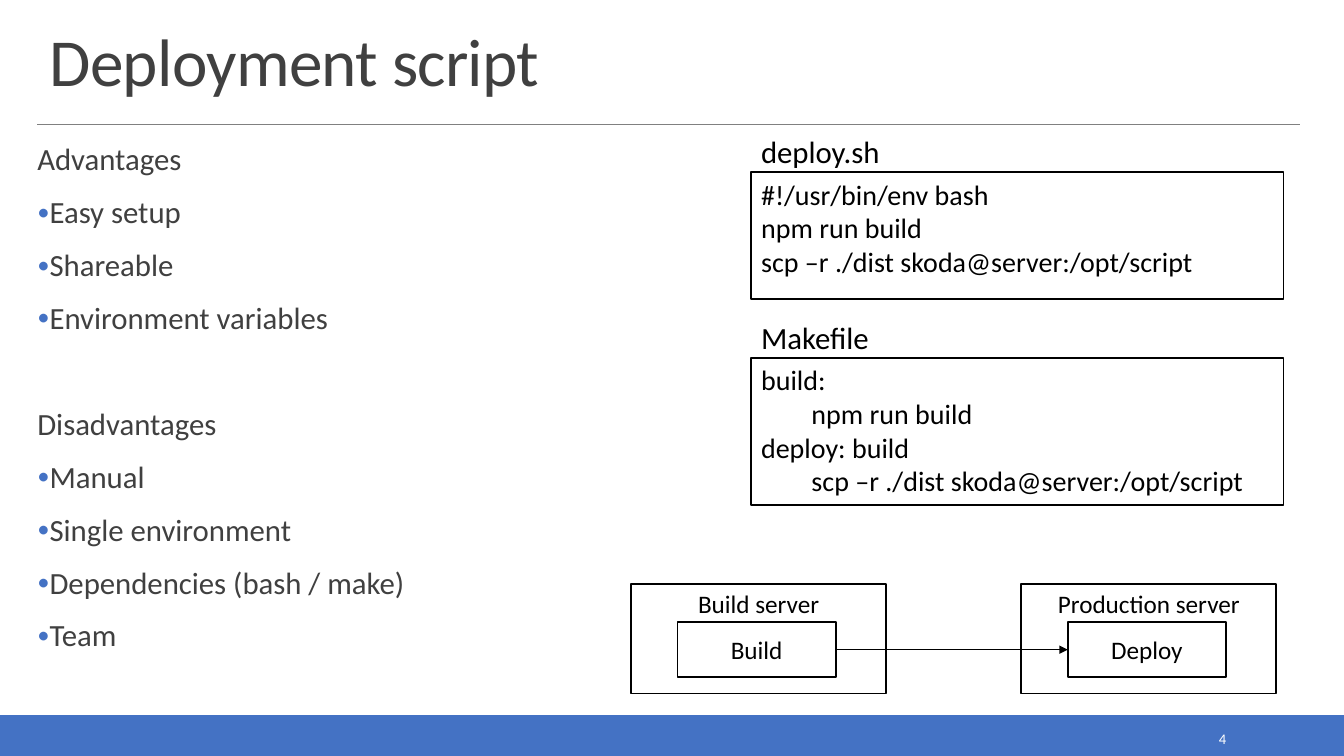
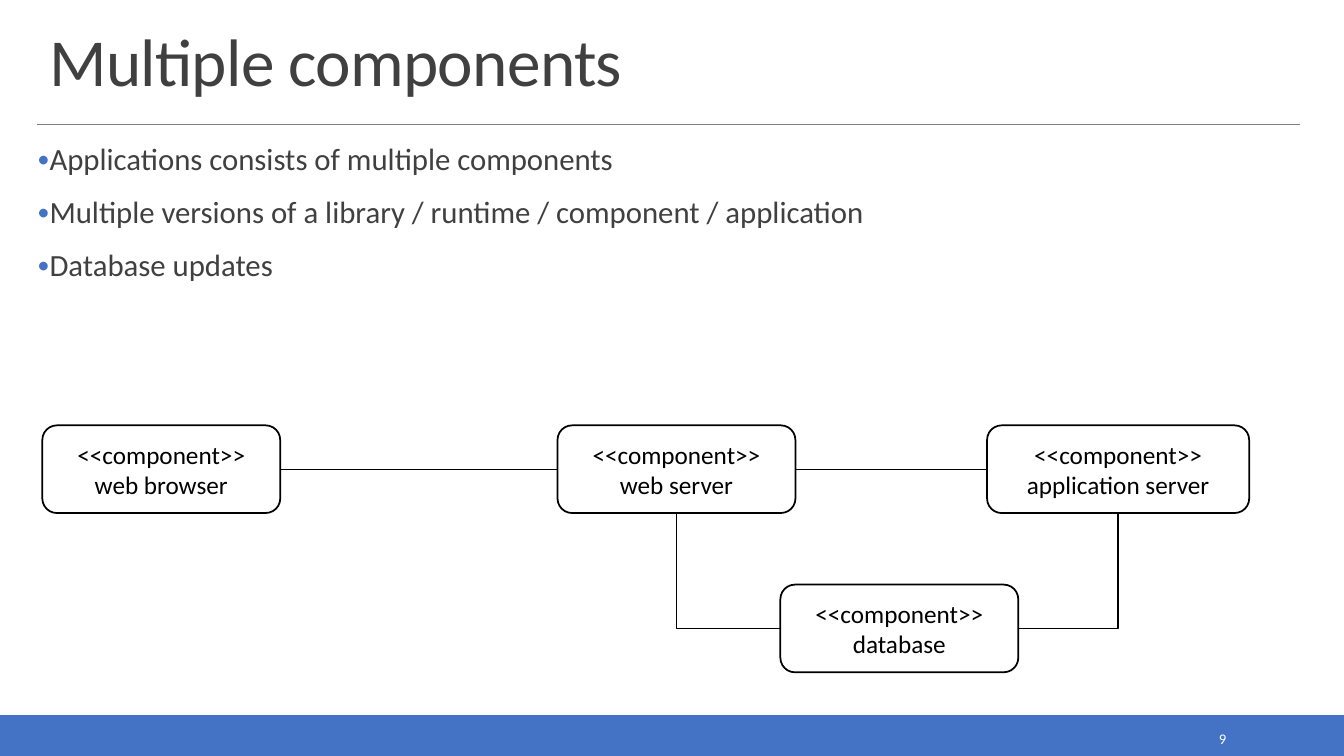
from lxml import etree
from pptx import Presentation
from pptx.dml.color import RGBColor
from pptx.enum.shapes import MSO_CONNECTOR as Connector, MSO_SHAPE as Preset
from pptx.enum.text import MSO_ANCHOR as Anchor, MSO_AUTO_SIZE as AutoSize, PP_ALIGN as Align
from pptx.oxml.ns import qn
from pptx.util import Inches, Pt

BLUE = RGBColor(0x44, 0x72, 0xC4)
DARK_GREY = RGBColor(0x40, 0x40, 0x40)
RULE_GREY = RGBColor(0x80, 0x80, 0x80)
BLACK = RGBColor(0, 0, 0)
WHITE = RGBColor(0xFF, 0xFF, 0xFF)
FONT = "Calibri"
TOP, LEFT, BOTTOM, RIGHT = range(4)  # connection sites


# Text helpers
def add_run(paragraph, text, size, color):
    run = paragraph.add_run()
    run.text = text
    run.font.name = FONT
    run.font.size = Pt(size)
    run.font.color.rgb = color
    return run


def write_lines(frame, lines, size, color=BLACK, align=Align.LEFT):
    for index, line in enumerate(lines):
        paragraph = frame.paragraphs[0] if index == 0 else frame.add_paragraph()
        paragraph.alignment = align
        if "\t" in line:
            tabs = etree.SubElement(paragraph._p.get_or_add_pPr(), qn("a:tabLst"))
            etree.SubElement(tabs, qn("a:tab"), pos=str(Inches(0.5)), algn="l")
        add_run(paragraph, line, size, color)


def set_bullet(paragraph, bulleted):
    properties = paragraph._p.get_or_add_pPr()
    indent = Inches(0.1) if bulleted else 0
    properties.set("marL", str(indent))
    properties.set("indent", str(-indent))
    if not bulleted:
        etree.SubElement(properties, qn("a:buNone"))
        return
    color = etree.SubElement(properties, qn("a:buClr"))
    etree.SubElement(color, qn("a:srgbClr"), val=str(BLUE))
    etree.SubElement(properties, qn("a:buSzPct"), val="80000")
    etree.SubElement(properties, qn("a:buFont"), typeface=FONT)
    etree.SubElement(properties, qn("a:buChar"), char="•")


# Shape helpers
def place(shape, left, top, width, height):
    shape.left, shape.top = Inches(left), Inches(top)
    shape.width, shape.height = Inches(width), Inches(height)


def add_text_box(slide, left, top, width, height):
    box = slide.shapes.add_textbox(Inches(left), Inches(top), Inches(width), Inches(height))
    box.text_frame.word_wrap = True
    return box.text_frame


def add_box(slide, left, top, width, height, lines=(), size=18, preset=Preset.RECTANGLE,
            fill=WHITE, line=BLACK, align=Align.CENTER, anchor=Anchor.MIDDLE):
    box = slide.shapes.add_shape(preset, Inches(left), Inches(top), Inches(width), Inches(height))
    box.shadow.inherit = False
    box.fill.solid()
    box.fill.fore_color.rgb = fill
    box.line.color.rgb = line
    box.line.width = Pt(1.25)
    box.text_frame.word_wrap = True
    box.text_frame.vertical_anchor = anchor
    write_lines(box.text_frame, lines, size, align=align)
    return box


def style_line(connector, color, width):
    connector.line.color.rgb = color
    connector.line.width = Pt(width)
    etree.SubElement(connector._element.spPr, qn("a:effectLst"))


def connect(slide, start, start_site, end, end_site, bent=False, arrow=False):
    kind = Connector.ELBOW if bent else Connector.STRAIGHT
    connector = slide.shapes.add_connector(kind, 0, 0, 0, 0)
    connector.begin_connect(start, start_site)
    connector.end_connect(end, end_site)
    style_line(connector, BLACK, 1)
    if bent:  # one corner only
        connector._element.spPr.find(qn("a:prstGeom")).set("prst", "bentConnector2")
    if arrow:
        etree.SubElement(connector.line._get_or_add_ln(), qn("a:tailEnd"), type="triangle")


# Shared slide frame: title, rule, footer band and number
def add_framed_slide(presentation, title, number):
    slide = presentation.slides.add_slide(presentation.slide_layouts[1])
    add_box(slide, 0, 7.1, 13.33, 0.4, fill=BLUE, line=BLUE)
    rule = slide.shapes.add_connector(
        Connector.STRAIGHT, Inches(0.37), Inches(1.23), Inches(12.89), Inches(1.23))
    style_line(rule, RULE_GREY, 0.5)

    place(slide.shapes.title, 0.39, 0.2, 12.52, 0.84)
    frame = slide.shapes.title.text_frame
    frame.auto_size = AutoSize.NONE
    frame.vertical_anchor = Anchor.BOTTOM
    paragraph = frame.paragraphs[0]
    paragraph.alignment = Align.LEFT
    paragraph.line_spacing = 0.85
    run = add_run(paragraph, title, 48, DARK_GREY)
    run.font._element.set("spc", "-50")

    frame = add_text_box(slide, 10.83, 7.19, 1.43, 0.28)
    frame.vertical_anchor = Anchor.MIDDLE
    write_lines(frame, [str(number)], 10.5, WHITE, Align.RIGHT)
    return slide


def fill_body(slide, box, groups):
    """Each group is an optional heading and its bullet items."""
    body = slide.placeholders[1]
    place(body, *box)
    frame = body.text_frame
    frame.auto_size = AutoSize.NONE
    frame.vertical_anchor = Anchor.TOP
    frame.margin_left = frame.margin_right = 0
    frame.margin_top = frame.margin_bottom = Inches(0.04)
    entries = []
    for heading, items in groups:
        if heading:
            entries.append((heading, False))
        entries += [(item, True) for item in items]
    for index, (text, bulleted) in enumerate(entries):
        paragraph = frame.add_paragraph() if index else frame.paragraphs[0]
        set_bullet(paragraph, bulleted)
        paragraph.line_spacing = 0.9
        # A later heading stands one line further down
        paragraph.space_before = Pt(0 if index == 0 else 12 if bulleted else 50)
        paragraph.space_after = Pt(2)
        add_run(paragraph, text, 22, DARK_GREY)


# Regions
def add_listing(slide, left, top, height, name, code):
    label = add_text_box(slide, left, top - 0.4, 2.2, 0.4)
    write_lines(label, [name], 22)
    label.paragraphs[0].line_spacing = 0.9
    add_box(slide, left, top, 5.28, height, code, 20, align=Align.LEFT, anchor=Anchor.TOP)


def add_server(slide, left, top, name, step):
    add_box(slide, left, top, 2.53, 1.09, [name], anchor=Anchor.TOP)
    return add_box(slide, left + 0.46, top + 0.38, 1.57, 0.55, [step])


def add_component(slide, left, top, name, width=2.36):
    return add_box(slide, left, top, width, 0.87, ["<<component>>", name],
                   preset=Preset.ROUNDED_RECTANGLE)


# Slides
def build_deployment_slide(presentation):
    slide = add_framed_slide(presentation, "Deployment script", 4)
    fill_body(slide, (0.37, 1.39, 4.57, 5.51), [
        ("Advantages", ["Easy setup", "Shareable", "Environment variables"]),
        ("Disadvantages", ["Manual", "Single environment", "Dependencies (bash / make)", "Team"]),
    ])
    copy_command = "scp –r ./dist skoda@server:/opt/script"
    add_listing(slide, 7.45, 1.71, 1.26, "deploy.sh",
                ["#!/usr/bin/env bash", "npm run build", copy_command])
    add_listing(slide, 7.45, 3.55, 1.46, "Makefile",
                ["build:", "\tnpm run build", "deploy: build", "\t" + copy_command])
    build = add_server(slide, 6.26, 5.79, "Build server", "Build")
    deploy = add_server(slide, 10.13, 5.79, "Production server", "Deploy")
    connect(slide, build, RIGHT, deploy, LEFT, arrow=True)


def build_components_slide(presentation):
    slide = add_framed_slide(presentation, "Multiple components", 9)
    fill_body(slide, (0.37, 1.39, 12.52, 1.73), [
        (None, ["Applications consists of multiple components",
                "Multiple versions of a library / runtime / component / application",
                "Database updates"]),
    ])
    browser = add_component(slide, 0.42, 4.22, "web browser")
    web_server = add_component(slide, 5.53, 4.22, "web server")
    application = add_component(slide, 9.79, 4.22, "application server", 2.6)
    database = add_component(slide, 7.74, 5.8, "database")
    connect(slide, browser, RIGHT, web_server, LEFT)
    connect(slide, web_server, RIGHT, application, LEFT)
    connect(slide, database, LEFT, web_server, BOTTOM, bent=True)
    connect(slide, database, RIGHT, application, BOTTOM, bent=True)


def main():
    presentation = Presentation()
    presentation.slide_width = Inches(13.33)
    presentation.slide_height = Inches(7.5)
    build_deployment_slide(presentation)
    build_components_slide(presentation)
    presentation.save("out.pptx")


if __name__ == "__main__":
    main()
